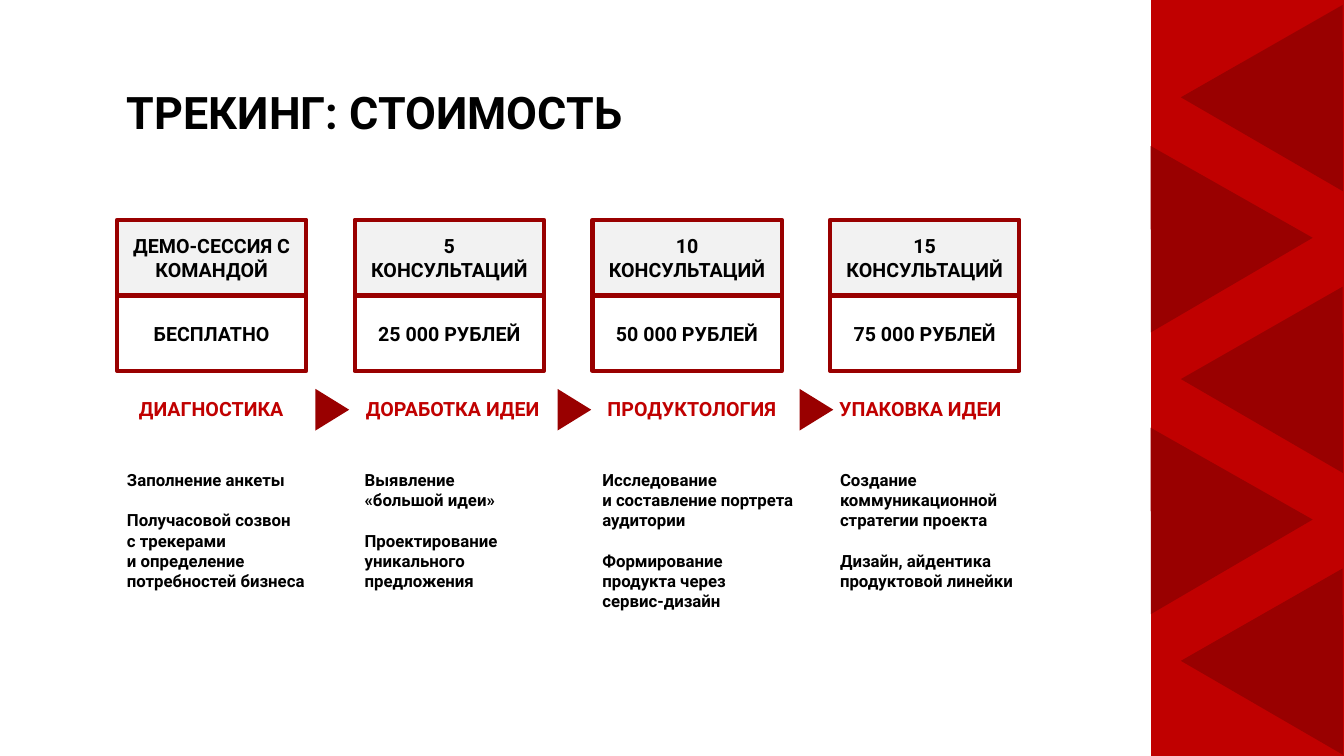
import pptx
import pptx.util
import pptx.dml.color
import pptx.enum.shapes
import pptx.enum.text

Cm = pptx.util.Cm
Pt = pptx.util.Pt
Form = pptx.enum.shapes.MSO_SHAPE
Align = pptx.enum.text.PP_ALIGN
Anchor = pptx.enum.text.MSO_ANCHOR
Fit = pptx.enum.text.MSO_AUTO_SIZE

COLORS = {
    "black": "000000",
    "white": "FFFFFF",
    "gray": "F2F2F2",
    "red": "C00000",
    "dark": "990000",
}

PLANS = [
    ("ДЕМО-СЕССИЯ С КОМАНДОЙ", "БЕСПЛАТНО", "ДИАГНОСТИКА", 3.25, 3.33,
     [["Заполнение анкеты"],
      ["Получасовой созвон", "с трекерами", "и определение потребностей бизнеса"]]),
    ("5 КОНСУЛЬТАЦИЙ", "25 000 РУБЛЕЙ", "ДОРАБОТКА ИДЕИ", 8.97, 3.33,
     [["Выявление", "«большой идеи»"],
      ["Проектирование уникального предложения"]]),
    ("10 КОНСУЛЬТАЦИЙ", "50 000 РУБЛЕЙ", "ПРОДУКТОЛОГИЯ", 15.06, 3.84,
     [["Исследование", "и составление портрета аудитории"],
      ["Формирование продукта через", "сервис-дизайн"]]),
    ("15 КОНСУЛЬТАЦИЙ", "75 000 РУБЛЕЙ", "УПАКОВКА ИДЕИ", 20.9, 3.84,
     [["Создание коммуникационной стратегии проекта"],
      ["Дизайн, айдентика продуктовой линейки"]]),
]


class Deck:
    """Holds the deck style and the current slide."""

    font = "Roboto"
    gap = Pt(14.5)
    edge = Pt(3)

    def __init__(self, slide):
        self.slide = slide

    def color(self, name):
        return pptx.dml.color.RGBColor.from_string(COLORS[name])

    def run(self, para, text, size, color):
        run = para.add_run()
        run.text = text
        run.font.name = self.font
        run.font.size = Pt(size)
        run.font.bold = True
        run.font.color.rgb = self.color(color)

    def text(self, left, top, width, height, groups, size, color="black"):
        box = self.slide.shapes.add_textbox(Cm(left), Cm(top), Cm(width), Cm(height))
        frame = box.text_frame
        frame.word_wrap = True
        frame.auto_size = Fit.SHAPE_TO_FIT_TEXT
        para = frame.paragraphs[0]
        for g, group in enumerate(groups):
            for n, line in enumerate(group):
                if g or n:
                    para = frame.add_paragraph()
                if g and n == 0:
                    para.space_before = self.gap
                self.run(para, line, size, color)

    def shape(self, form, left, top, width, height, fill, turn=0):
        item = self.slide.shapes.add_shape(form, Cm(left), Cm(top), Cm(width), Cm(height))
        item.shadow.inherit = False
        item.fill.solid()
        item.fill.fore_color.rgb = self.color(fill)
        item.line.fill.background()
        item.rotation = turn
        return item

    def cell(self, left, top, text, fill):
        item = self.shape(Form.RECTANGLE, left, top, 4.77, 1.9, fill)
        item.line.color.rgb = self.color("dark")
        item.line.width = self.edge
        frame = item.text_frame
        frame.word_wrap = True
        frame.vertical_anchor = Anchor.MIDDLE
        para = frame.paragraphs[0]
        para.alignment = Align.CENTER
        self.run(para, text, 14, "black")


def main():
    show = pptx.Presentation()
    show.slide_width = Cm(33.87)
    show.slide_height = Cm(19.05)
    deck = Deck(show.slides.add_slide(show.slide_layouts[6]))

    deck.text(2.95, 2.01, 22.17, 1.63, [["ТРЕКИНГ: СТОИМОСТЬ"]], 32)

    deck.shape(Form.RECTANGLE, 29.01, 0, 4.86, 19.05, "red")
    for i in range(5):
        left, turn = [(30.46, 30.1), (27.66, 329.7)][i % 2]
        deck.shape(Form.ISOSCELES_TRIANGLE, left, -0.15 + 3.55 * i, 4.72, 4.06, "dark", turn)

    for i, (offer, price, stage, start, height, notes) in enumerate(PLANS):
        left = 2.95 + 5.99 * i
        deck.cell(left, 5.54, offer, "gray")
        deck.cell(left, 7.45, price, "white")
        deck.text(start, 9.88, 5.11, 0.86, [[stage]], 14, "red")
        deck.text(left, 11.71, 5.41, height, notes, 12)

    for i in range(len(PLANS) - 1):
        deck.shape(Form.ISOSCELES_TRIANGLE, 7.85 + 6.1 * i, 9.9, 1.05, 0.85, "dark", 90)

    show.save("out.pptx")


if __name__ == "__main__":
    main()
